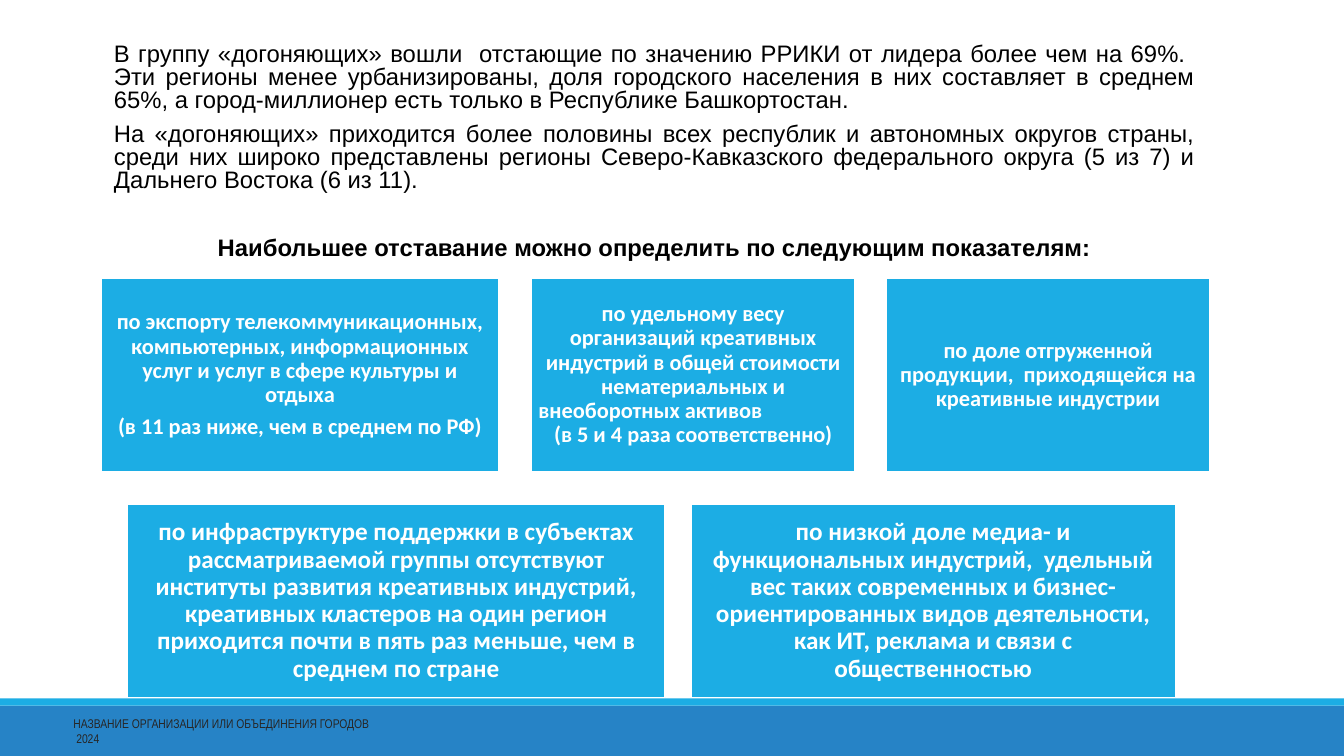
import dataclasses

import pptx
import pptx.dml.color
import pptx.enum.shapes
import pptx.enum.text
import pptx.util

Inches = pptx.util.Inches
Pt = pptx.util.Pt
ALIGN = pptx.enum.text.PP_ALIGN
ANCHOR = pptx.enum.text.MSO_ANCHOR


@dataclasses.dataclass(frozen=True)
class Theme:
    """Colours, fonts and type sizes of the slide."""
    sky: str = "1CADE4"
    blue: str = "2683C6"
    white: str = "FFFFFF"
    black: str = "000000"
    grey: str = "262626"
    sans: str = "Arial"
    narrow: str = "Arial Narrow"
    card: str = "Calibri"
    body: int = 17
    small: int = 16
    large: int = 18
    foot: int = 9


THEME = Theme()
INTRO = [
    "В группу «догоняющих» вошли  отстающие по значению РРИКИ от лидера более чем на 69%.  "
    "Эти регионы менее урбанизированы, доля городского населения в них составляет в среднем 65%, "
    "а город-миллионер есть только в Республике Башкортостан.",
    "На «догоняющих» приходится более половины всех республик и автономных округов страны, "
    "среди них широко представлены регионы Северо-Кавказского федерального округа (5 из 7) "
    "и Дальнего Востока (6 из 11).",
]
TITLE = "Наибольшее отставание можно определить по следующим показателям:"
TOP = [
    (1, 3.95, [
        ("по экспорту телекоммуникационных, компьютерных, информационных услуг "
         "и услуг в сфере культуры и отдыха", ALIGN.CENTER, 5.6),
        ("(в 11 раз ниже, чем в среднем по РФ)", ALIGN.CENTER, 5.6)]),
    (5.27, 3.21, [
        ("по удельному весу организаций креативных индустрий в общей стоимости "
         "нематериальных и", ALIGN.CENTER, 0),
        ("внеоборотных активов", ALIGN.LEFT, 0),
        ("(в 5 и 4 раза соответственно)", ALIGN.CENTER, 5.6)]),
    (8.79, 3.21, [
        ("по доле отгруженной продукции,  приходящейся на креативные индустрии",
         ALIGN.CENTER, 5.6)]),
]
LOW = [
    (1.26, 5.34, [
        ("по инфраструктуре поддержки в субъектах рассматриваемой группы отсутствуют институты "
         "развития креативных индустрий, креативных кластеров на один регион приходится почти "
         "в пять раз меньше, чем в среднем по стране", ALIGN.CENTER, 6.3)]),
    (6.85, 4.81, [
        ("по низкой доле медиа- и функциональных индустрий,  удельный вес таких современных "
         "и бизнес-ориентированных видов деятельности, как ИТ, реклама и связи с общественностью",
         ALIGN.CENTER, 6.3)]),
]
FOOT = ["НАЗВАНИЕ ОРГАНИЗАЦИИ ИЛИ ОБЪЕДИНЕНИЯ ГОРОДОВ", " 2024"]


def tint(code):
    """Return a colour from its hex code."""
    return pptx.dml.color.RGBColor.from_string(code)


def write(frame, text, font, size, ink, bold=False, align=ALIGN.LEFT,
          lead=1.0, before=0, after=0):
    """Add one paragraph with one run to a text frame."""
    first = frame.paragraphs[0]
    para = frame.add_paragraph() if first.runs else first
    para.alignment, para.line_spacing = align, lead
    para.space_before, para.space_after = Pt(before), Pt(after)
    run = para.add_run()
    run.text = text
    run.font.name, run.font.size, run.font.bold = font, Pt(size), bold
    run.font.color.rgb = tint(ink)


def block(slide, left, top, width, height, fill, line=None):
    """Draw a flat rectangle."""
    shape = slide.shapes.add_shape(
        pptx.enum.shapes.MSO_SHAPE.RECTANGLE,
        Inches(left), Inches(top), Inches(width), Inches(height))
    shape.shadow.inherit = False
    shape.fill.solid()
    shape.fill.fore_color.rgb = tint(fill)
    if line:
        shape.line.color.rgb = tint(line)
        shape.line.width = Pt(1.25)
    else:
        shape.line.fill.background()
    return shape


def card(slide, left, top, width, lines, size):
    """Draw one indicator card with its text."""
    shape = block(slide, left, top, width, 1.92, THEME.sky, THEME.white)
    frame = shape.text_frame
    frame.word_wrap = True
    frame.vertical_anchor = ANCHOR.MIDDLE
    frame.margin_left = frame.margin_right = Inches(0.07)
    frame.margin_top = frame.margin_bottom = Inches(0.07)
    for text, align, after in lines:
        write(frame, text, THEME.card, size, THEME.white, True, align, 0.9, 0, after)


def box(slide, left, top, width, height, anchor, side):
    """Add a wrapping text box and return its frame."""
    frame = slide.shapes.add_textbox(
        Inches(left), Inches(top), Inches(width), Inches(height)).text_frame
    frame.word_wrap = True
    frame.vertical_anchor = anchor
    frame.margin_left, frame.margin_right = Inches(side), Inches(0)
    return frame


def intro(slide):
    """Write the opening paragraphs and the heading of the cards."""
    frame = box(slide, 1.05, 0.39, 10.8, 2.29, ANCHOR.TOP, 0.08)
    for text in INTRO:
        write(frame, text, THEME.sans, THEME.body, THEME.black,
              False, ALIGN.JUSTIFY, 0.8, 6, 2)
    write(frame, TITLE, THEME.sans, THEME.body, THEME.black,
          True, ALIGN.CENTER, 0.8, 30.5, 2)


def footer(slide):
    """Draw the bottom bands and the footer text."""
    block(slide, 0, 7, 13.33, 0.5, THEME.blue)
    block(slide, 0, 6.93, 13.33, 0.07, THEME.sky)
    frame = box(slide, 0.63, 7.05, 5.27, 0.4, ANCHOR.MIDDLE, 0.1)
    for text in FOOT:
        write(frame, text, THEME.narrow, THEME.foot, THEME.grey)


def main():
    """Build and save the slide."""
    deck = pptx.Presentation()
    deck.slide_width, deck.slide_height = Inches(13.33), Inches(7.5)
    slide = deck.slides.add_slide(deck.slide_layouts[6])
    footer(slide)
    intro(slide)
    for top, size, cards in ((2.76, THEME.small, TOP), (5, THEME.large, LOW)):
        for left, width, lines in cards:
            card(slide, left, top, width, lines, size)
    deck.save("out.pptx")


if __name__ == "__main__":
    main()
